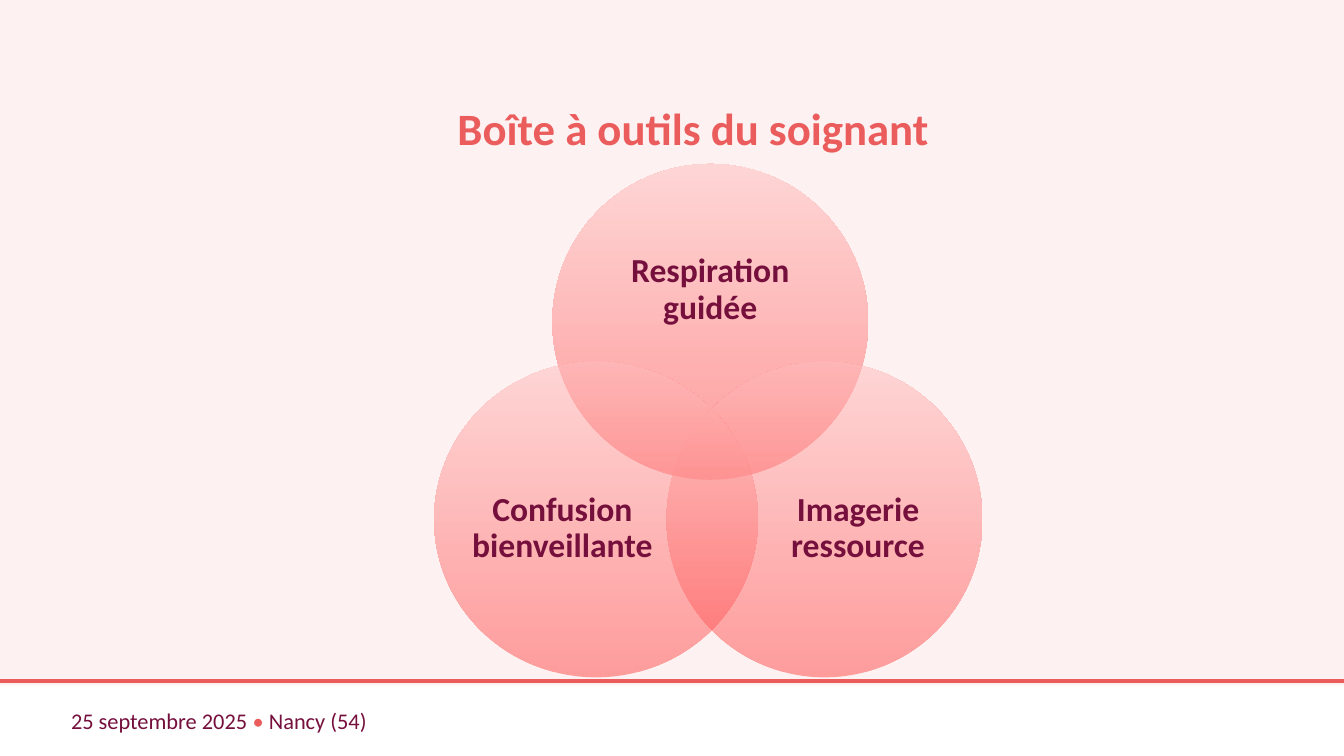
from lxml.etree import SubElement
from pptx import Presentation
from pptx.dml.color import RGBColor
from pptx.enum.shapes import MSO_CONNECTOR, MSO_SHAPE
from pptx.enum.text import MSO_ANCHOR, PP_ALIGN
from pptx.oxml.ns import qn
from pptx.util import Emu, Pt

EMU_PER_PX = 4572
WIDTH, HEIGHT = 2000, 1125
BLUSH = RGBColor(0xFD, 0xF1, 0xF1)
WHITE = RGBColor(0xFF, 0xFF, 0xFF)
CORAL = RGBColor(0xEB, 0x5C, 0x5C)
PLUM = RGBColor(0x75, 0x10, 0x3D)
CIRCLE_COLORS = (RGBColor(0xFF, 0x48, 0x48), RGBColor(0xFF, 0xBB, 0xBB))

FOOTER = {"size": Pt(12), "bold": False}
LABEL = {"size": Pt(18), "bold": True}
TITLE = {"size": Pt(24), "bold": True}

TOOLS = [
    ("Respiration guidée", (822, 244, 470, 470), (884, 326, 346, 212)),
    ("Imagerie ressource", (992, 538, 470, 470), (1136, 658, 282, 258)),
    ("Confusion bienveillante", (646, 538, 482, 470), (692, 658, 290, 258)),
]


def px(*lengths):
    """Convert pixel lengths to EMU."""
    return [Emu(length * EMU_PER_PX) for length in lengths]


def set_attributes(target, values):
    """Set every attribute named in a dict of format values."""
    for name, value in values.items():
        setattr(target, name, value)


def add_plain_shape(slide, kind, box):
    """Add a preset shape without shadow or outline."""
    shape = slide.shapes.add_shape(kind, *px(*box))
    shape.shadow.inherit = False
    shape.line.fill.background()
    return shape


def add_circle(slide, box):
    """Add a half-transparent circle that darkens downwards."""
    circle = add_plain_shape(slide, MSO_SHAPE.OVAL, box)
    circle.fill.gradient()
    circle.fill.gradient_angle = 90
    for stop, color in zip(circle.fill.gradient_stops, CIRCLE_COLORS):
        stop.color.rgb = color
    for color_element in circle._element.spPr.iter(qn("a:srgbClr")):
        SubElement(color_element, qn("a:alpha"), val="50000")


def add_text(slide, box, runs, font, frame_format, paragraph_format):
    """Add a one-paragraph text box made of coloured runs."""
    frame = slide.shapes.add_textbox(*px(*box)).text_frame
    set_attributes(frame, {"word_wrap": True, **frame_format})
    paragraph = frame.paragraphs[0]
    set_attributes(paragraph, paragraph_format)
    for text, color in runs:
        run = paragraph.add_run()
        run.text = text
        set_attributes(run.font, {"name": "Calibri", **font})
        run.font.color.rgb = color


def margins(length):
    """Return equal margins for all four sides of a text frame."""
    sides = ("left", "top", "right", "bottom")
    return {f"margin_{side}": px(length)[0] for side in sides}


def add_rule(slide, top):
    """Add the coral rule across the slide."""
    rule = slide.shapes.add_connector(
        MSO_CONNECTOR.STRAIGHT, *px(0, top, WIDTH, top))
    rule.line.color.rgb = CORAL
    rule.line.width = Pt(2.25)
    SubElement(rule._element.spPr, qn("a:effectLst"))


def add_footer(slide):
    """Add the white band, its rule and the date and place."""
    band = add_plain_shape(slide, MSO_SHAPE.RECTANGLE, (0, 1020, WIDTH, 105))
    band.fill.solid()
    band.fill.fore_color.rgb = WHITE
    add_rule(slide, 1014)
    runs = [("25 septembre 2025 ", PLUM), ("• ", CORAL), ("Nancy (54)", PLUM)]
    add_text(slide, (86, 1042, 1002, 60), runs, FOOTER, {}, {})


def main():
    """Build the slide and save it."""
    presentation = Presentation()
    presentation.slide_width, presentation.slide_height = px(WIDTH, HEIGHT)
    slide = presentation.slides.add_slide(presentation.slide_layouts[6])
    slide.background.fill.solid()
    slide.background.fill.fore_color.rgb = BLUSH

    add_footer(slide)
    for label, circle_box, label_box in TOOLS:
        add_circle(slide, circle_box)
        add_text(slide, label_box, [(label, PLUM)], LABEL,
                 {"vertical_anchor": MSO_ANCHOR.MIDDLE, **margins(0)},
                 {"alignment": PP_ALIGN.CENTER, "line_spacing": 0.9})
    add_text(slide, (196, 130, 1686, 126),
             [("Boîte à outils du soignant ", CORAL)], TITLE,
             margins(20), {"alignment": PP_ALIGN.CENTER})
    presentation.save("out.pptx")


if __name__ == "__main__":
    main()
